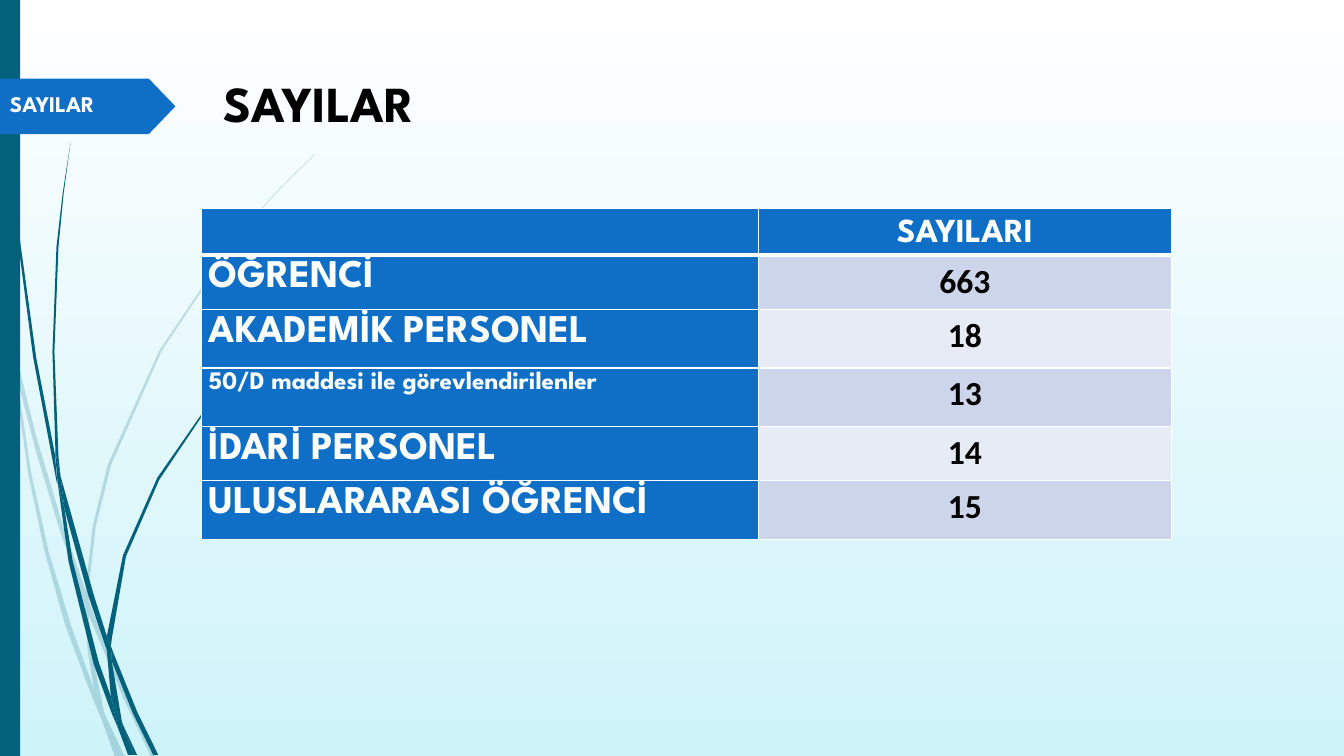
import pptx
import pptx.util
import pptx.dml.color
import pptx.enum.shapes
import pptx.enum.text
import pptx.oxml
import pptx.oxml.ns
import lxml.etree

PX = 9144
WIDTH, HEIGHT = 1333, 750
DISPLAY_FONT = "League Spartan"
NUMBER_FONT = "Calibri"

WHITE = pptx.dml.color.RGBColor(0xFF, 0xFF, 0xFF)
BLACK = pptx.dml.color.RGBColor(0x00, 0x00, 0x00)
AQUA = pptx.dml.color.RGBColor(0xCE, 0xF3, 0xF9)
TEAL = pptx.dml.color.RGBColor(0x04, 0x61, 0x7B)
BLUE = pptx.dml.color.RGBColor(0x0F, 0x6F, 0xC6)
BANDS = (pptx.dml.color.RGBColor(0xCC, 0xD5, 0xEA),
         pptx.dml.color.RGBColor(0xE7, 0xEB, 0xF5))

PALE_BLADES = [
    [(11, 350), (9, 322), (0, 282), (0, 299), (10, 344)],
    [(58, 522), (84, 599), (85, 586), (62, 520), (36, 433), (14, 345),
     (17, 376), (36, 449)],
    [(92, 607), (88, 596), (88, 610), (123, 694), (150, 751), (155, 751),
     (127, 692)],
    [(119, 751), (124, 751), (105, 711)],
    [(93, 683), (70, 619), (48, 546), (31, 469), (17, 376), (11, 350),
     (28, 470), (44, 546), (65, 621), (92, 693), (101, 714), (99, 707)],
    [(84, 599), (87, 646), (93, 683), (96, 692), (105, 711), (103, 706),
     (91, 646), (88, 610), (88, 608)],
    [(88, 584), (95, 522), (110, 462), (160, 349), (229, 245), (268, 198),
     (290, 175), (312, 154), (312, 153), (289, 175), (268, 197), (228, 244),
     (158, 348), (107, 461), (92, 522), (85, 584), (85, 586), (88, 596)],
    [(101, 714), (114, 751), (119, 751)],
    [(88, 608), (88, 610), (88, 596), (85, 586), (84, 599)],
    [(96, 692), (93, 683), (99, 707), (101, 714), (119, 751), (105, 711)],
]
DARK_BLADES = [
    [(7, 110), (17, 233), (33, 355), (56, 477), (57, 481), (55, 457), (55, 453),
     (36, 355), (19, 232), (8, 109), (5, 48), (4, 0), (3, 0), (4, 48)],
    [(88, 592), (106, 645), (106, 633), (106, 631), (93, 590), (60, 472),
     (64, 505)],
    [(113, 649), (110, 641), (111, 656), (132, 708), (152, 749), (157, 749),
     (136, 706)],
    [(110, 691), (98, 657), (72, 556), (64, 505), (57, 477), (68, 557),
     (93, 659), (111, 708), (117, 722), (116, 717)],
    [(60, 472), (58, 453), (54, 349), (58, 245), (63, 193), (70, 141),
     (62, 193), (56, 245), (52, 349), (55, 449)],
    [(133, 749), (136, 749), (122, 719)],
    [(57, 477), (64, 505), (60, 472), (55, 449), (55, 453)],
    [(111, 633), (125, 552), (158, 476), (205, 406), (231, 374), (245, 359),
     (261, 344), (260, 344), (245, 358), (231, 373), (204, 405), (156, 474),
     (122, 551), (106, 631), (110, 641)],
    [(117, 722), (127, 749), (131, 749)],
    [(106, 645), (110, 691), (116, 706), (122, 719), (121, 716), (111, 656),
     (109, 651)],
    [(106, 645), (109, 651), (111, 656), (110, 641), (106, 631), (106, 633)],
    [(116, 706), (110, 691), (116, 717), (117, 722), (130, 749), (133, 749),
     (122, 719)],
]
COUNTS = [
    ("ÖĞRENCİ", 28, "663"),
    ("AKADEMİK PERSONEL", 28, "18"),
    ("50/D maddesi ile görevlendirilenler", 18, "13"),
    ("İDARİ PERSONEL", 28, "14"),
    ("ULUSLARARASI ÖĞRENCİ", 28, "15"),
]


def px(length):
    return pptx.util.Emu(length * PX)


def style(paragraph, size, color, font=DISPLAY_FONT):
    paragraph.font.size = pptx.util.Pt(size)
    paragraph.font.name = font
    paragraph.font.bold = True
    paragraph.font.color.rgb = color


def paint(shape, color):
    shape.shadow.inherit = False
    shape.fill.solid()
    shape.fill.fore_color.rgb = color
    shape.line.fill.background()


def draw_blade(slide, outline, opacity):
    builder = slide.shapes.build_freeform(*outline[0], scale=PX)
    builder.add_line_segments(outline[1:], close=True)
    blade = builder.convert_to_shape()
    paint(blade, TEAL)
    if opacity < 100:
        tint = blade.fill._xPr.find(".//" + pptx.oxml.ns.qn("a:srgbClr"))
        lxml.etree.SubElement(tint, pptx.oxml.ns.qn("a:alpha"), val=str(opacity * 1000))


def draw_backdrop(slide):
    backdrop = slide.background.fill
    backdrop.gradient()
    backdrop.gradient_angle = 270
    for stop, color, position in zip(backdrop.gradient_stops, (WHITE, AQUA), (0, 1)):
        stop.color.rgb = color
        stop.position = position
    for blades, opacity in ((PALE_BLADES, 20), (DARK_BLADES, 100)):
        for outline in blades:
            draw_blade(slide, outline, opacity)
    side_bar = slide.shapes.add_shape(
        pptx.enum.shapes.MSO_SHAPE.RECTANGLE, 0, 0, px(20), px(HEIGHT))
    paint(side_bar, TEAL)


def draw_tag(slide, left, top, width, height):
    arrow = slide.shapes.add_shape(
        pptx.enum.shapes.MSO_SHAPE.PENTAGON, px(left), px(top), px(width), px(height))
    arrow.adjustments[0] = 0.48
    paint(arrow, BLUE)
    label = slide.shapes.add_textbox(px(left), px(top + 7), px(width - 5), px(37))
    label.text_frame.word_wrap = True
    label.text_frame.text = "SAYILAR"
    style(label.text_frame.paragraphs[0], 16, WHITE)


def place_title(slide, left, top, width, height):
    title = slide.shapes.title
    title.left, title.top, title.width, title.height = map(px, (left, top, width, height))
    title.text_frame.text = "SAYILAR"
    title.text_frame.vertical_anchor = pptx.enum.text.MSO_ANCHOR.MIDDLE
    heading = title.text_frame.paragraphs[0]
    heading.alignment = pptx.enum.text.PP_ALIGN.LEFT
    style(heading, 36, BLACK)


def border_cell(cell, widths):
    properties = cell._tc.get_or_add_tcPr()
    for index, (side, points) in enumerate(widths.items()):
        border = pptx.oxml.parse_xml(
            f'<a:{side} {pptx.oxml.ns.nsdecls("a")} w="{points * 12700}">'
            f'<a:solidFill><a:srgbClr val="{WHITE}"/></a:solidFill></a:{side}>')
        properties.insert(index, border)


def fill_cell(cell, text, size, color, fill, align, font=DISPLAY_FONT):
    cell.margin_left = cell.margin_right = px(7)
    cell.margin_top = cell.margin_bottom = 0
    cell.fill.solid()
    cell.fill.fore_color.rgb = fill
    cell.text = text
    paragraph = cell.text_frame.paragraphs[0]
    paragraph.alignment = align
    paragraph.line_spacing = 1.15
    style(paragraph, size, color, font)


def draw_counts(slide, left, top, columns, rows):
    center = pptx.enum.text.PP_ALIGN.CENTER
    justify = pptx.enum.text.PP_ALIGN.JUSTIFY
    table = slide.shapes.add_table(
        len(rows), len(columns), px(left), px(top), px(sum(columns)), px(sum(rows))).table
    for column, width in zip(table.columns, columns):
        column.width = px(width)
    for row, height in zip(table.rows, rows):
        row.height = px(height)
    for column, heading in enumerate(("", "SAYILARI")):
        cell = table.cell(0, column)
        fill_cell(cell, heading, 24, WHITE, BLUE, center)
        cell.vertical_anchor = pptx.enum.text.MSO_ANCHOR.MIDDLE
    for row, (group, size, count) in enumerate(COUNTS, 1):
        fill_cell(table.cell(row, 0), group, size, WHITE, BLUE, justify)
        fill_cell(table.cell(row, 1), count, 24, BLACK, BANDS[(row - 1) % 2],
                  center, NUMBER_FONT)
    for row in range(len(rows)):
        for column in range(len(columns)):
            border_cell(table.cell(row, column), {
                "lnL": 1, "lnR": 1, "lnT": 3 if row == 1 else 1,
                "lnB": 3 if row == 0 else 1})


def main():
    deck = pptx.Presentation()
    deck.slide_width, deck.slide_height = px(WIDTH), px(HEIGHT)
    slide = deck.slides.add_slide(deck.slide_layouts[5])
    draw_backdrop(slide)
    draw_tag(slide, 0, 78, 174, 55)
    draw_counts(slide, 200, 207, (552, 410), (46, 54, 58, 58, 54, 58))
    place_title(slide, 212, 65, 975, 74)
    deck.save("out.pptx")


if __name__ == "__main__":
    main()
